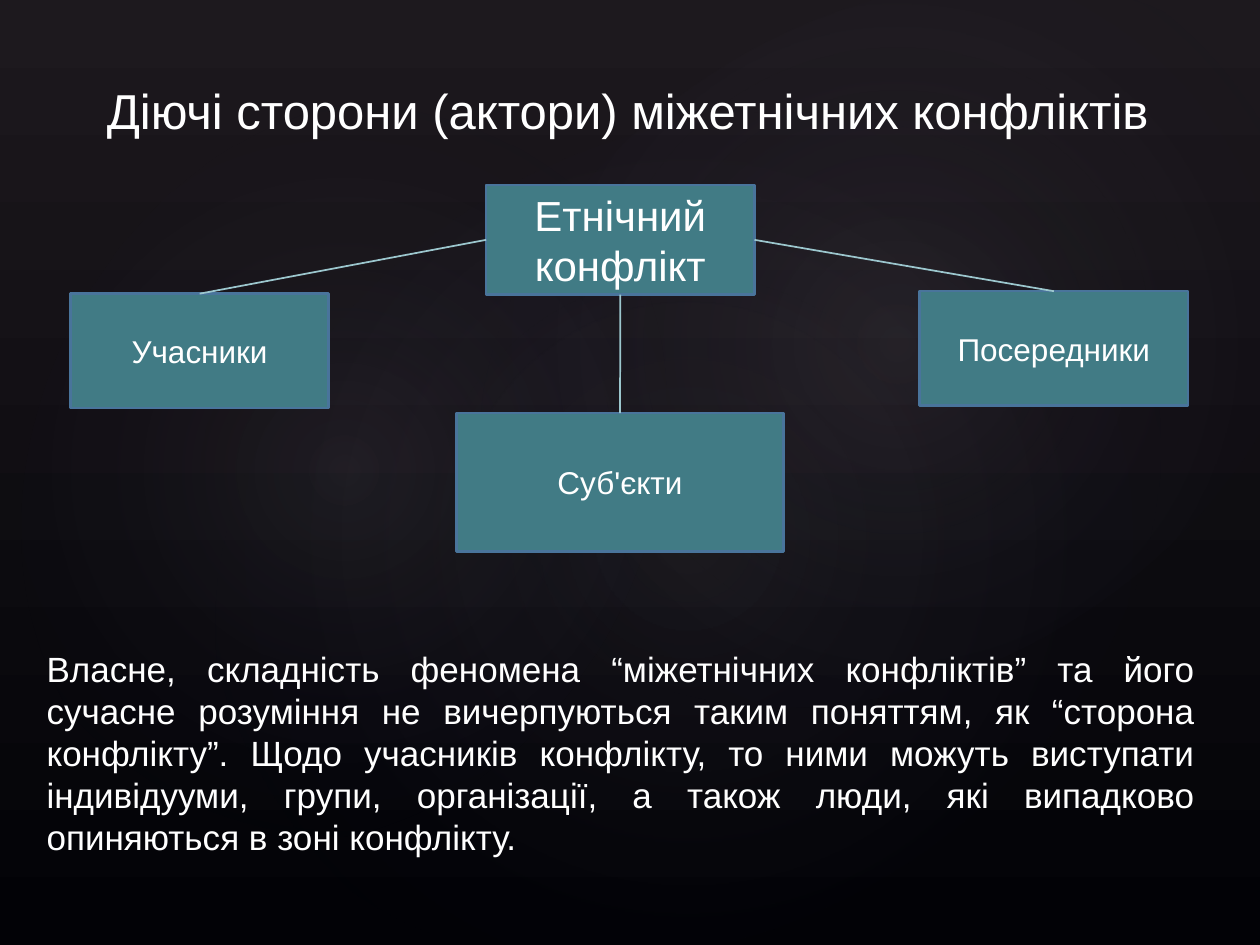
from lxml import etree
from pptx import Presentation
from pptx.dml.color import RGBColor
from pptx.enum.shapes import MSO_CONNECTOR, MSO_SHAPE
from pptx.enum.text import MSO_ANCHOR, MSO_AUTO_SIZE, PP_ALIGN
from pptx.oxml import parse_xml
from pptx.oxml.ns import nsdecls, qn
from pptx.util import Cm, Pt

ELLIPSE, RECTANGLE = MSO_SHAPE.OVAL, MSO_SHAPE.RECTANGLE
STRAIGHT = MSO_CONNECTOR.STRAIGHT
TOP, MIDDLE = MSO_ANCHOR.TOP, MSO_ANCHOR.MIDDLE
LEFT, CENTER, JUSTIFY = PP_ALIGN.LEFT, PP_ALIGN.CENTER, PP_ALIGN.JUSTIFY
NO_AUTOFIT = MSO_AUTO_SIZE.NONE
TOP_SIDE, LEFT_SIDE, BOTTOM_SIDE, RIGHT_SIDE = range(4)
TITLE_ONLY = 5

FONT = "Arial"
WHITE = RGBColor(0xFF, 0xFF, 0xFF)
SKY_TOP = RGBColor(0x1D, 0x19, 0x1E)
SKY_BOTTOM = RGBColor(0x02, 0x02, 0x06)
GLOW_CENTER = RGBColor(0xC4, 0xBC, 0xC6)
GLOW_EDGE = RGBColor(0x24, 0x28, 0x52)
TEAL = RGBColor(0x41, 0x7B, 0x85)
BOX_LINE = RGBColor(0x49, 0x74, 0x9B)
LINK_LINE = RGBColor(0x9C, 0xC7, 0xCE)

# left, top, width, height in cm, rotation in degrees, opacity in percent
GLOWS = [
    (3.81, 2.9, 20.12, 15.85, 328.7, 7),
    (-0.76, 3.25, 15.39, 12.45, 294.3, 8),
    (9.09, 0.33, 18.01, 13.21, 328.7, 8),
]
TITLE = "Діючі сторони (актори) міжетнічних конфліктів"
EXPLANATION = (
    "Власне, складність феномена “міжетнічних конфліктів” та його сучасне "
    "розуміння не вичерпуються таким поняттям, як “сторона конфлікту”. Щодо "
    "учасників конфлікту, то ними можуть виступати індивідууми, групи, "
    "організації, а також люди, які випадково опиняються в зоні конфлікту."
)


def write_text(text_frame, text, size, alignment, anchor=TOP):
    text_frame.word_wrap = True
    text_frame.auto_size = NO_AUTOFIT
    text_frame.vertical_anchor = anchor
    paragraph = text_frame.paragraphs[0]
    paragraph.alignment = alignment
    run = paragraph.add_run()
    run.text = text
    run.font.name = FONT
    run.font.size = Pt(size)
    run.font.color.rgb = WHITE


def fill_with_glow(shape, opacity):
    """Give the shape a radial gradient that fades out towards its edge."""
    shape.fill.background()
    properties = shape._element.spPr
    gradient = parse_xml(
        f'<a:gradFill {nsdecls("a")} rotWithShape="1"><a:gsLst>'
        f'<a:gs pos="0"><a:srgbClr val="{GLOW_CENTER}">'
        f'<a:alpha val="{opacity * 1000}"/></a:srgbClr></a:gs>'
        f'<a:gs pos="58000"><a:srgbClr val="{GLOW_EDGE}">'
        f'<a:alpha val="0"/></a:srgbClr></a:gs></a:gsLst>'
        f'<a:path path="circle"><a:fillToRect l="50000" t="50000" '
        f'r="50000" b="50000"/></a:path></a:gradFill>'
    )
    properties.replace(properties.find(qn("a:noFill")), gradient)


def add_backdrop(slide):
    fill = slide.background.fill
    fill.gradient()
    fill.gradient_angle = 270
    for stop, color in zip(fill.gradient_stops, (SKY_TOP, SKY_BOTTOM)):
        stop.color.rgb = color
    for *box, rotation, opacity in GLOWS:
        glow = slide.shapes.add_shape(ELLIPSE, *map(Cm, box))
        glow.rotation = rotation
        glow.shadow.inherit = False
        glow.line.fill.background()
        fill_with_glow(glow, opacity)


def place_title(slide, left, top, width, height):
    title = slide.shapes.title
    title.left, title.top, title.width, title.height = map(Cm, (left, top, width, height))
    write_text(title.text_frame, TITLE, 28, LEFT)
    slide.shapes._spTree.append(title._element)  # in front of the glows


def add_explanation(slide, left, top, width, height):
    text_box = slide.shapes.add_textbox(*map(Cm, (left, top, width, height)))
    write_text(text_box.text_frame, EXPLANATION, 20, JUSTIFY)


def add_box(slide, text, size, left, top, width, height):
    box = slide.shapes.add_shape(RECTANGLE, *map(Cm, (left, top, width, height)))
    box.shadow.inherit = False
    box.fill.solid()
    box.fill.fore_color.rgb = TEAL
    box.line.color.rgb = BOX_LINE
    box.line.width = Pt(1.5)
    write_text(box.text_frame, text, size, CENTER, MIDDLE)
    return box


def link(slide, start, start_side, end):
    """Join a side of the start box to the top of the end box."""
    connector = slide.shapes.add_connector(STRAIGHT, 0, 0, 0, 0)
    connector.begin_connect(start, start_side)
    connector.end_connect(end, TOP_SIDE)
    connector.line.color.rgb = LINK_LINE
    connector.line.width = Pt(1)
    etree.SubElement(connector._element.spPr, qn("a:effectLst"))


def add_actors_diagram(slide, left, top):
    conflict = add_box(slide, "Етнічний конфлікт", 24, left + 8.38, top, 5.41, 2.21)
    actors = [
        ("Учасники", LEFT_SIDE, 0, 2.19, 5.21, 2.31),
        ("Суб'єкти", BOTTOM_SIDE, 7.78, 4.6, 6.6, 2.79),
        ("Посередники", RIGHT_SIDE, 17.12, 2.14, 5.41, 2.31),
    ]
    for name, side, x, y, width, height in actors:
        actor = add_box(slide, name, 18, left + x, top + y, width, height)
        link(slide, conflict, side, actor)


def main():
    presentation = Presentation()
    presentation.slide_width, presentation.slide_height = Cm(25.4), Cm(19.05)
    slide = presentation.slides.add_slide(presentation.slide_layouts[TITLE_ONLY])
    add_backdrop(slide)
    place_title(slide, 1.9, 1.5, 21.8, 1.45)
    add_actors_diagram(slide, 1.42, 3.73)
    add_explanation(slide, 0.69, 12.93, 23.65, 4.52)
    presentation.save("out.pptx")


if __name__ == "__main__":
    main()
